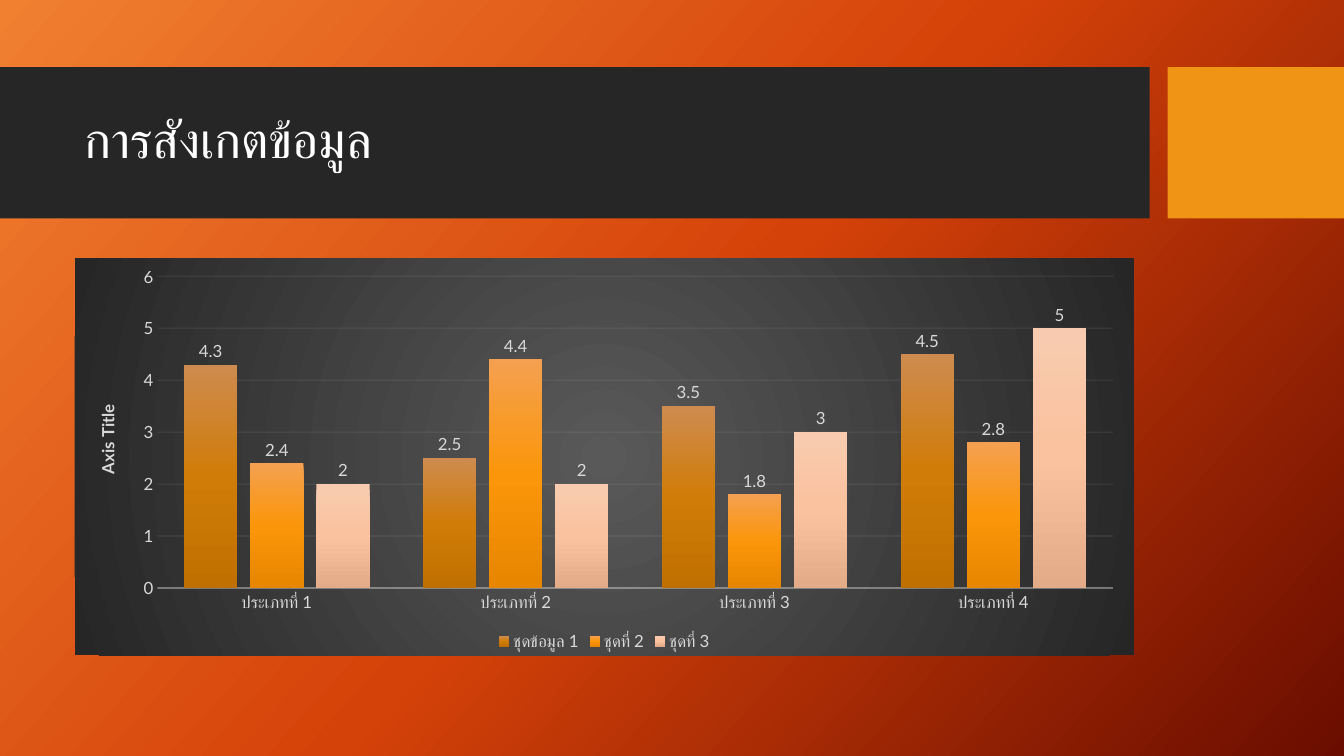
from dataclasses import dataclass

from lxml.etree import SubElement
from pptx import Presentation
from pptx.chart.axis import CategoryAxis, ValueAxis
from pptx.chart.chart import Chart
from pptx.chart.data import CategoryChartData
from pptx.dml.color import RGBColor
from pptx.dml.line import LineFormat
from pptx.enum.chart import XL_CHART_TYPE as ChartType
from pptx.enum.chart import XL_LABEL_POSITION as LabelPosition
from pptx.enum.chart import XL_LEGEND_POSITION as LegendPosition
from pptx.enum.chart import XL_TICK_MARK as TickMark
from pptx.enum.shapes import MSO_SHAPE as Preset
from pptx.enum.text import MSO_ANCHOR as Anchor
from pptx.oxml import parse_xml
from pptx.oxml.ns import nsdecls, qn
from pptx.slide import Slide
from pptx.text.text import Font
from pptx.util import Pt

PX = 9525
FONT = "Lato"
COLORS = {
    "band": "262626",
    "accent": "F09415",
    "title": "FFFFFF",
    "label": "D9D9D9",
    "rule": "F2F2F2",
}
Stops = tuple[tuple[int, str], ...]
PAGE_STOPS: Stops = ((0, "F18031"), (50, "D54209"), (100, "6A0D00"))
CHART_STOPS: Stops = ((0, "595959"), (100, "262626"))
CIRCLE = ('<a:path path="circle"><a:fillToRect l="50000" t="50000" '
          'r="50000" b="50000"/></a:path>')


@dataclass(frozen=True)
class Area:
    left: int
    top: int
    width: int
    height: int

    def emu(self) -> tuple[int, ...]:
        return tuple(n * PX for n in (self.left, self.top, self.width, self.height))


@dataclass(frozen=True)
class Band:
    area: Area
    color: str


@dataclass(frozen=True)
class Series:
    name: str
    values: tuple[float, ...]
    stops: Stops


BANDS = (
    Band(Area(0, 64, 1095, 144), "band"),
    Band(Area(1112, 64, 168, 144), "accent"),
)
TITLE_AREA = Area(71, 79, 1009, 113)
CHART_AREA = Area(71, 246, 1009, 378)
CATEGORIES = [f"ประเภทที่ {number}" for number in range(1, 5)]
SERIES = (
    Series("ชุดข้อมูล 1", (4.3, 2.5, 3.5, 4.5),
           ((0, "CE8B4F"), (50, "D07C08"), (100, "C07000"))),
    Series("ชุดที่ 2", (2.4, 4.4, 1.8, 2.8),
           ((0, "F4A050"), (50, "FB960A"), (100, "E88600"))),
    Series("ชุดที่ 3", (2, 2, 3, 5),
           ((0, "F8CBB0"), (50, "FAC29E"), (100, "E3AB87"))),
)


def rgb(name: str) -> RGBColor:
    return RGBColor.from_string(COLORS[name])


def linear(degrees: int) -> str:
    return f'<a:lin ang="{degrees * 60000}" scaled="0"/>'


def gradient(stops: Stops, direction: str) -> str:
    marks = "".join(
        f'<a:gs pos="{place * 1000}"><a:srgbClr val="{color}"/></a:gs>'
        for place, color in stops
    )
    return (f'<a:gradFill {nsdecls("a")} rotWithShape="1">'
            f"<a:gsLst>{marks}</a:gsLst>{direction}</a:gradFill>")


def swap_solid_fill(parent, stops: Stops, direction: str) -> None:
    solid = parent.find(qn("a:solidFill"))
    parent.replace(solid, parse_xml(gradient(stops, direction)))


def style_font(font: Font, size: int, color: str, bold: bool = False) -> None:
    font.name = FONT
    font.size = Pt(size)
    font.bold = bold
    font.color.rgb = rgb(color)


def style_rule(line: LineFormat, width: float, opacity: int) -> None:
    line.width = Pt(width)
    line.color.rgb = rgb("rule")
    color = line.fill._xPr.find(f".//{qn('a:srgbClr')}")
    SubElement(color, qn("a:alpha"), val=str(opacity * 1000))


def paint_page(page: Slide) -> None:
    page.background.fill.solid()
    page.background.fill.fore_color.rgb = rgb("accent")
    properties = page.element.find(f".//{qn('p:bgPr')}")
    swap_solid_fill(properties, PAGE_STOPS, linear(42))


def add_band(page: Slide, band: Band) -> None:
    shape = page.shapes.add_shape(Preset.RECTANGLE, *band.area.emu())
    shape.shadow.inherit = False
    shape.fill.solid()
    shape.fill.fore_color.rgb = rgb(band.color)
    shape.line.fill.background()


def add_title(page: Slide, text: str) -> None:
    frame = page.shapes.add_textbox(*TITLE_AREA.emu()).text_frame
    frame.word_wrap = True
    frame.vertical_anchor = Anchor.MIDDLE
    para = frame.paragraphs[0]
    para.text = text
    para.line_spacing = 0.9
    style_font(para.font, 36, "title")


def style_axis(axis: CategoryAxis | ValueAxis) -> None:
    axis.major_tick_mark = TickMark.NONE
    axis.minor_tick_mark = TickMark.NONE
    style_font(axis.tick_labels.font, 12, "label")


def style_axes(chart: Chart) -> None:
    style_axis(chart.category_axis)
    style_rule(chart.category_axis.format.line, 1, 54)

    axis = chart.value_axis
    style_axis(axis)
    axis.minimum_scale, axis.maximum_scale, axis.major_unit = 0, 6, 1
    axis.format.line.fill.background()
    style_rule(axis.major_gridlines.format.line, 0.75, 10)
    frame = axis.axis_title.text_frame
    frame.text = "Axis Title"
    style_font(frame.paragraphs[0].font, 12, "label", bold=True)
    body = axis.axis_title.element.find(f".//{qn('a:bodyPr')}")
    body.set("rot", "-5400000")
    body.set("vert", "horz")


def add_chart(page: Slide) -> None:
    data = CategoryChartData()
    data.categories = CATEGORIES
    for series in SERIES:
        data.add_series(series.name, series.values)
    chart = page.shapes.add_chart(
        ChartType.COLUMN_CLUSTERED, *CHART_AREA.emu(), data
    ).chart
    chart.has_title = False
    style_font(chart.font, 10, "title")
    chart.has_legend = True
    chart.legend.position = LegendPosition.BOTTOM
    chart.legend.include_in_layout = False
    style_font(chart.legend.font, 12, "label")
    style_axes(chart)

    plot = chart.plots[0]
    plot.vary_by_categories = False
    plot.gap_width = 100
    plot.overlap = -24
    for column, series in zip(plot.series, SERIES):
        column.format.fill.solid()
        column.format.fill.fore_color.rgb = rgb("accent")
        swap_solid_fill(column.format.fill._xPr, series.stops, linear(90))
        labels = column.data_labels
        labels.show_value = True
        labels.position = LabelPosition.OUTSIDE_END
        style_font(labels.font, 12, "label")

    chart.element.find(qn("c:chart")).addnext(parse_xml(
        f'<c:spPr {nsdecls("c", "a")}>{gradient(CHART_STOPS, CIRCLE)}'
        "<a:ln><a:noFill/></a:ln></c:spPr>"
    ))


def main() -> None:
    deck = Presentation()
    deck.slide_width, deck.slide_height = 1280 * PX, 720 * PX
    page = deck.slides.add_slide(deck.slide_layouts[6])
    paint_page(page)
    for band in BANDS:
        add_band(page, band)
    add_title(page, "การสังเกตข้อมูล")
    add_chart(page)
    deck.save("out.pptx")


if __name__ == "__main__":
    main()
